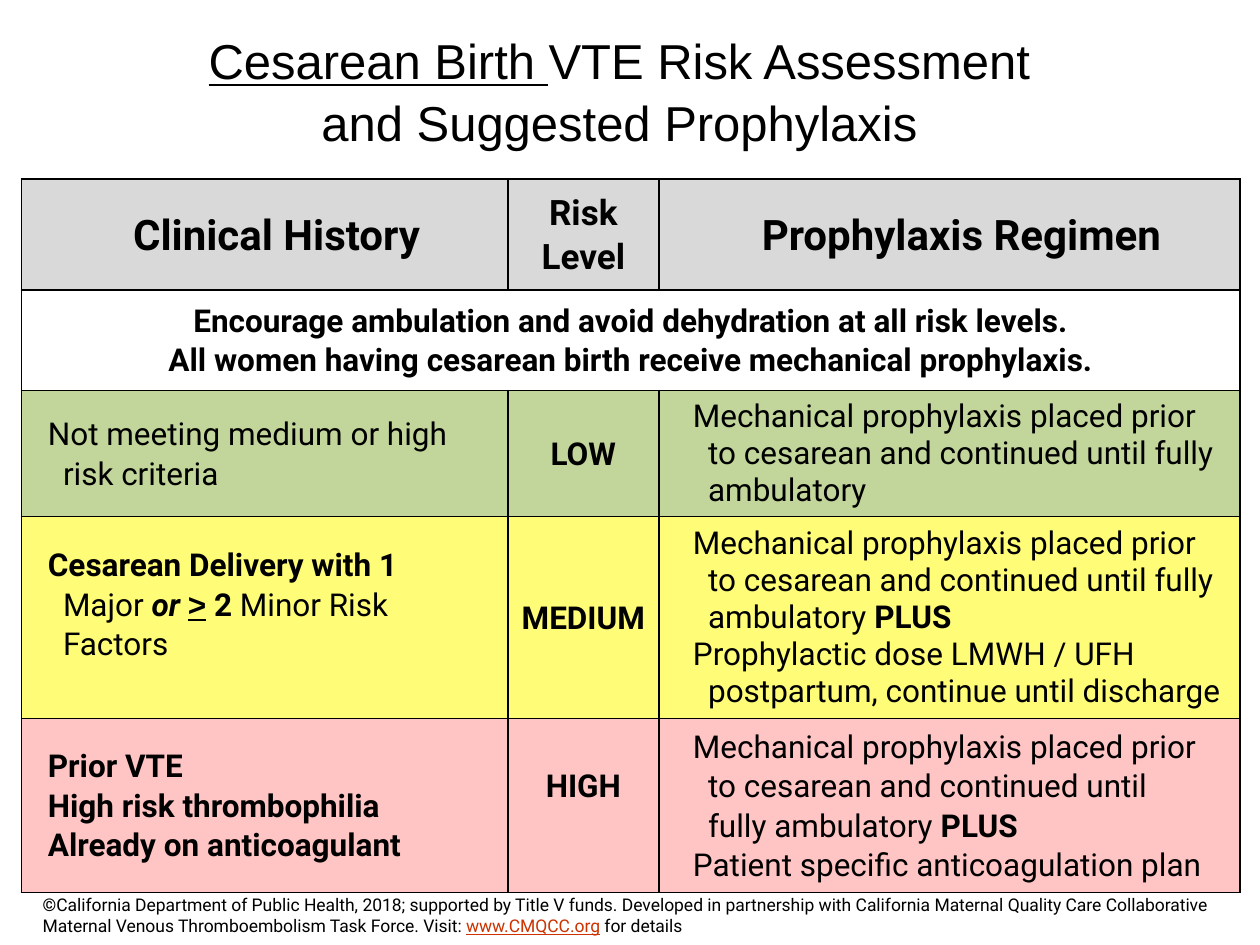
from lxml import etree
from pptx import Presentation
from pptx.dml.color import RGBColor
from pptx.enum.text import MSO_ANCHOR, PP_ALIGN
from pptx.oxml.ns import qn
from pptx.util import Inches, Pt

LEFT, CENTER = PP_ALIGN.LEFT, PP_ALIGN.CENTER
MIDDLE, TOP = MSO_ANCHOR.MIDDLE, MSO_ANCHOR.TOP

THEME = {
    "title_font": "Arial", "body_font": "Roboto",
    "title": 28, "head": 24, "subhead": 20, "body": 18, "note": 10,
    "ink": "000000", "link": "CC3300", "line": 1,
    "header": "D9D9D9", "plain": "FFFFFF",
    "low": "C2D69B", "medium": "FFFD78", "high": "FFC5C5",
}
BOLD = {"bold": True}
MECHANICAL = "Mechanical prophylaxis placed prior to cesarean and continued until fully ambulatory"

TITLE = [[("Cesarean Birth ", {"underline": True}),
          ("VTE Risk Assessment and Suggested Prophylaxis", {})]]
NOTE = [[("©", BOLD),
         ("California Department of Public Health, 2018; supported by Title V funds. "
          "Developed in partnership with California Maternal Quality Care Collaborative "
          "Maternal Venous Thromboembolism Task Force. Visit: ", {}),
         ("www.CMQCC.org", {"color": "link", "underline": True}),
         (" for details", {})]]

HEAD = {"size": "head", "align": CENTER, "left": 0.19}
BANNER = {"align": CENTER}
HISTORY = {"left": 0.25, "hang": 0.12, "pad_right": 0.25}
REGIMEN = {"left": 0.31, "hang": 0.12, "spacing": 1}

COLS = [3.86, 1.2, 4.61]
ROWS = [
    (0.88, "header", [
        ([[("Clinical History", BOLD)]], HEAD),
        ([[("Risk Level", BOLD)]], {"size": "subhead", "align": CENTER}),
        ([[("Prophylaxis Regimen", BOLD)]], HEAD)]),
    (0.8, "plain", [
        ([[("Encourage ambulation and avoid dehydration at all risk levels.", BOLD)],
          [("All women having cesarean birth receive mechanical prophylaxis.", BOLD)]], BANNER)]),
    (0.97, "low", [
        ([[("Not meeting medium or high risk criteria", {})]], HISTORY),
        ([[("LOW", BOLD)]], BANNER),
        ([[(MECHANICAL, {})]], REGIMEN)]),
    (1.55, "medium", [
        ([[("Cesarean Delivery with 1", BOLD), (" Major ", {}),
           ("or ", {"bold": True, "italic": True}),
           (">", {"bold": True, "underline": True, "font": "title_font"}),
           (" 2", BOLD), (" Minor Risk Factors", {})]],
         {**HISTORY, "pad_bottom": 0.26}),
        ([[("MEDIUM", BOLD)]], BANNER),
        ([[(MECHANICAL + " ", {}), ("PLUS", BOLD)],
          [("Prophylactic dose LMWH / UFH postpartum, continue until discharge", {})]], REGIMEN)]),
    (1.35, "high", [
        ([[("Prior VTE", BOLD)], [("High risk thrombophilia", BOLD)],
          [("Already on anticoagulant", BOLD)]], HISTORY),
        ([[("HIGH", BOLD)]], {"align": CENTER, "pad_bottom": 0.36}),
        ([[(MECHANICAL, {}), (" PLUS", BOLD)],
          [("Patient specific anticoagulation plan", {})]],
         {**REGIMEN, "spacing": 1.07, "pad_right": 0.25})]),
]


def rgb(name):
    return RGBColor.from_string(THEME[name])


def write(tf, paras, size="body", font="body_font", align=LEFT, left=0, hang=0, spacing=1.07):
    tf.word_wrap = True
    for i, runs in enumerate(paras):
        p = tf.add_paragraph() if i else tf.paragraphs[0]
        p.alignment, p.line_spacing = align, spacing
        pPr = p._p.get_or_add_pPr()
        pPr.set("marL", str(Inches(left)))
        pPr.set("indent", str(-Inches(hang)))
        for text, fmt in runs:
            r = p.add_run()
            r.text = text
            r.font.name = THEME[fmt.get("font", font)]
            r.font.size = Pt(THEME[size])
            r.font.color.rgb = rgb(fmt.get("color", "ink"))
            r.font.bold = fmt.get("bold", False)
            r.font.italic = fmt.get("italic", False)
            r.font.underline = fmt.get("underline", False)


def add_text(slide, box, paras, anchor=TOP, **fmt):
    tf = slide.shapes.add_textbox(*map(Inches, box)).text_frame
    tf.vertical_anchor = anchor
    write(tf, paras, **fmt)


def add_borders(cell):
    tcPr = cell._tc.get_or_add_tcPr()
    for i, side in enumerate(("lnL", "lnR", "lnT", "lnB")):
        ln = etree.Element(qn("a:" + side), w=str(Pt(THEME["line"])))
        fill = etree.SubElement(ln, qn("a:solidFill"))
        etree.SubElement(fill, qn("a:srgbClr"), val=THEME["ink"])
        tcPr.insert(i, ln)


def fill_cell(cell, paras, pad_right=0.08, pad_bottom=0.05, **fmt):
    cell.vertical_anchor = MIDDLE
    cell.margin_left, cell.margin_top = Inches(0.08), Inches(0.05)
    cell.margin_right, cell.margin_bottom = Inches(pad_right), Inches(pad_bottom)
    write(cell.text_frame, paras, **fmt)


def add_risk_table(slide, left, top):
    height = sum(row[0] for row in ROWS)
    box = map(Inches, (left, top, sum(COLS), height))
    table = slide.shapes.add_table(len(ROWS), len(COLS), *box).table
    for col, width in zip(table.columns, COLS):
        col.width = Inches(width)
    for i, (row_height, color, cells) in enumerate(ROWS):
        table.rows[i].height = Inches(row_height)
        for j in range(len(COLS)):
            cell = table.cell(i, j)
            cell.fill.solid()
            cell.fill.fore_color.rgb = rgb(color)
            add_borders(cell)
        if len(cells) == 1:
            table.cell(i, 0).merge(table.cell(i, len(COLS) - 1))
        for j, (paras, fmt) in enumerate(cells):
            fill_cell(table.cell(i, j), paras, **fmt)


def main():
    prs = Presentation()
    prs.slide_width, prs.slide_height = Inches(10), Inches(7.5)
    slide = prs.slides.add_slide(prs.slide_layouts[6])
    add_text(slide, (0.24, 7.05, 9.52, 0.44), NOTE, size="note", spacing=1)
    add_text(slide, (1.33, 0, 7.17, 1.42), TITLE, anchor=MIDDLE, size="title",
             font="title_font", align=CENTER, spacing=1.05)
    add_risk_table(slide, 0.17, 1.42)
    prs.save("out.pptx")


if __name__ == "__main__":
    main()
